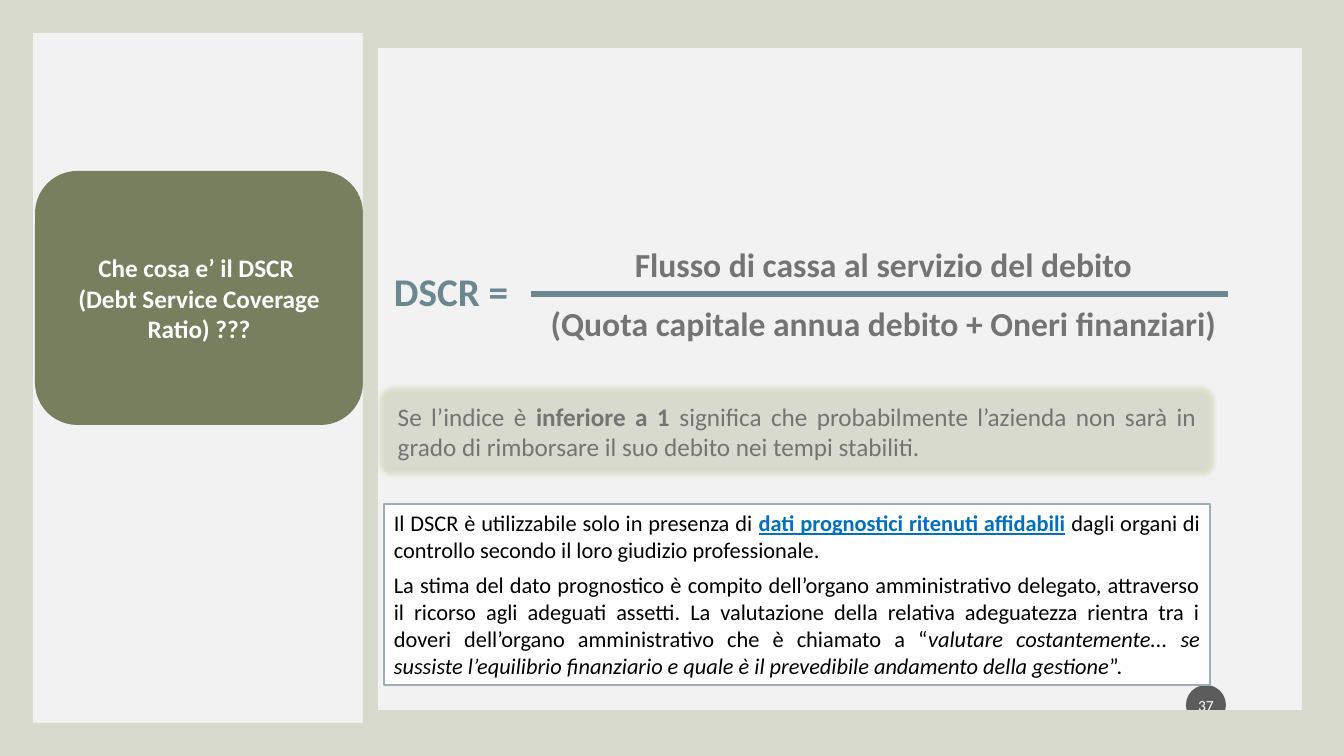
from lxml import etree
from pptx import Presentation
from pptx.dml.color import RGBColor
from pptx.enum.shapes import MSO_CONNECTOR, MSO_SHAPE as SHAPE
from pptx.enum.text import MSO_ANCHOR as ANCHOR, PP_ALIGN as ALIGN
from pptx.oxml.ns import qn
from pptx.util import Pt

PX = 914400 / 100.8
COLORS = {
    "paper": "F2F2F2", "frame": "D7DACD", "olive": "777F5E", "slate": "6B8891",
    "border": "9BAFB5", "gray": "747474", "blue": "0070C0", "dark": "1D1D1D",
    "white": "FFFFFF", "black": "000000",
}


def px(*lengths):
    return [round(n * PX) for n in lengths]


def color(name):
    return RGBColor.from_string(COLORS[name])


def add_alpha(fill_parent, percent):
    clr = fill_parent.find(".//" + qn("a:srgbClr"))
    etree.SubElement(clr, qn("a:alpha"), val=str(percent * 1000))


def add_box(s, kind, box, fill, line=None):
    sp = s.shapes.add_shape(kind, *px(*box))
    sp.shadow.inherit = False
    sp.fill.solid()
    sp.fill.fore_color.rgb = color(fill)
    if line:
        sp.line.color.rgb = color(line)
        sp.line.width = Pt(1)
    else:
        sp.line.fill.background()
    return sp


def write(sp, paragraphs, size, ink, align, anchor=ANCHOR.TOP, bold=False, gap=0):
    """Each paragraph is a list of (text, style) runs; styles: b, i, link."""
    tf = sp.text_frame
    tf.word_wrap = True
    tf.vertical_anchor = anchor
    for n, runs in enumerate(paragraphs):
        p = tf.add_paragraph() if n else tf.paragraphs[0]
        p.alignment = align
        if n and gap:
            p.space_before = Pt(gap)
        for text, style in runs:
            r = p.add_run()
            r.text = text
            font = r.font
            font.name, font.size = "Calibri", Pt(size)
            font.bold = bold or style in ("b", "link")
            font.italic = style == "i"
            font.underline = style == "link"
            font.color.rgb = color("blue" if style == "link" else ink)


def add_page_number(s, x, y, d):
    sp = add_box(s, SHAPE.OVAL, (x, y, d, d), "dark")
    add_alpha(sp.fill._xPr.find(qn("a:solidFill")), 70)
    sp.text_frame.margin_left, sp.text_frame.margin_right = px(2, 2)
    write(sp, [[("37", "")]], 11, "white", ALIGN.CENTER, ANCHOR.MIDDLE)


def add_title(s, x, y, w, h):
    sp = add_box(s, SHAPE.ROUNDED_RECTANGLE, (x, y, w, h), "olive")
    lines = ["Che cosa e’ il DSCR ", "(Debt Service Coverage Ratio) ???"]
    write(sp, [[(t, "")] for t in lines], 18, "white", ALIGN.CENTER,
          ANCHOR.MIDDLE, bold=True)


def add_formula(s, x, y, w, h):
    # Fraction
    sp = s.shapes.add_textbox(*px(x + 79, y, w - 79, h))
    terms = ["Flusso di cassa al servizio del debito",
             "(Quota capitale annua debito + Oneri finanziari)"]
    write(sp, [[(t, "")] for t in terms], 24, "gray", ALIGN.CENTER, bold=True, gap=13)
    # Left-hand side
    sp = s.shapes.add_textbox(*px(x, y + 23, 147, 57))
    write(sp, [[("DSCR =", "")]], 28, "slate", ALIGN.LEFT, bold=True)
    # Fraction bar
    bar = s.shapes.add_connector(MSO_CONNECTOR.STRAIGHT,
                                 *px(x + 147, y + 55, x + 844, y + 55))
    bar.line.color.rgb = color("slate")
    bar.line.width = Pt(4.25)
    etree.SubElement(bar._element.spPr, qn("a:effectLst"))


def add_warning(s, x, y, w, h):
    sp = add_box(s, SHAPE.ROUNDED_RECTANGLE, (x, y, w, h), "frame")
    # Soft glow around the box
    effects = sp._element.spPr.find(qn("a:effectLst"))
    glow = etree.SubElement(effects, qn("a:glow"), rad=str(Pt(5)))
    etree.SubElement(glow, qn("a:srgbClr"), val="CDD3B0")
    add_alpha(glow, 60)
    write(sp, [[("Se l’indice è ", ""), ("inferiore a 1 ", "b"),
                ("significa che probabilmente l’azienda non sarà in grado di "
                 "rimborsare il suo debito nei tempi stabiliti.", "")]],
          18, "gray", ALIGN.JUSTIFY, ANCHOR.MIDDLE)


def add_note(s, x, y, w, h):
    sp = add_box(s, SHAPE.RECTANGLE, (x, y, w, h), "white", "border")
    write(sp, [
        [("Il DSCR è utilizzabile solo in presenza di ", ""),
         ("dati prognostici ritenuti affidabili", "link"),
         (" dagli organi di controllo secondo il loro giudizio professionale.", "")],
        [("La stima del dato prognostico è compito dell’organo amministrativo "
          "delegato, attraverso il ricorso agli adeguati assetti. La valutazione "
          "della relativa adeguatezza rientra tra i doveri dell’organo "
          "amministrativo che è chiamato a “", ""),
         ("valutare costantemente... se sussiste l’equilibrio finanziario e quale "
          "è il prevedibile andamento della gestione", "i"),
         ("”.", "")],
    ], 16, "black", ALIGN.JUSTIFY, gap=6)


def add_frame(s, x, y, w, h, thickness):
    sp = add_box(s, SHAPE.FRAME, (x, y, w, h), "frame")
    sp.adjustments[0] = thickness / min(w, h)


def build_slide(prs):
    s = prs.slides.add_slide(prs.slide_layouts[6])
    s.background.fill.solid()
    s.background.fill.fore_color.rgb = color("paper")
    # The frames overlap the page number, so they come later
    add_page_number(s, 1186, 685, 40)
    add_title(s, 35, 171, 328, 254)
    add_note(s, 384, 504, 826, 181)
    add_formula(s, 384, 239, 920, 110)
    add_frame(s, 0, 0, 1344, 756, 33)
    add_warning(s, 384, 392, 826, 79)
    add_frame(s, 363, 33, 954, 692, 15)


def main():
    prs = Presentation()
    prs.slide_width, prs.slide_height = px(1344, 756)
    build_slide(prs)
    prs.save("out.pptx")


if __name__ == "__main__":
    main()
